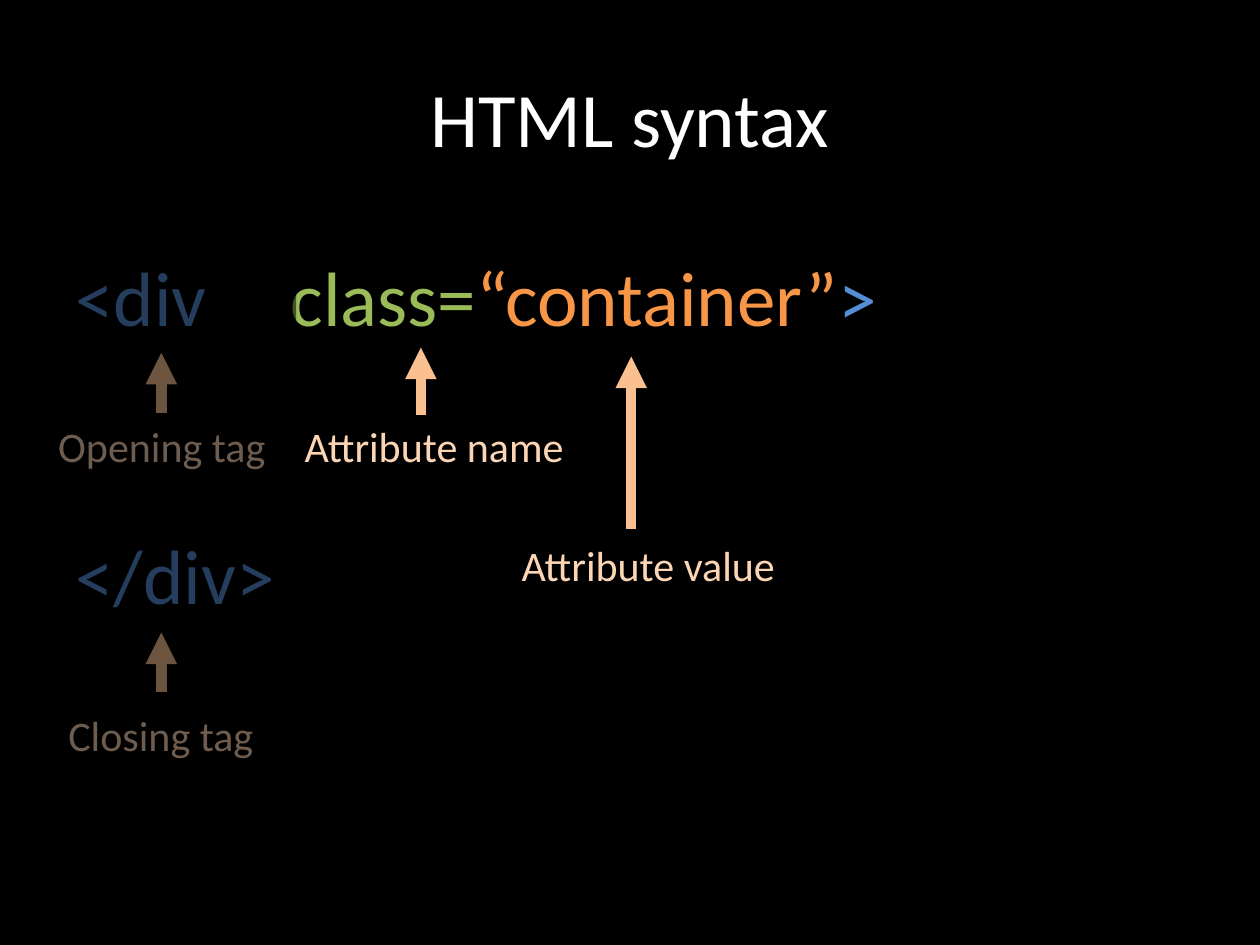
from pptx import Presentation
from pptx import util as u
from pptx.dml.color import RGBColor
from pptx.enum import shapes, text
from pptx.oxml import ns
from lxml import etree

Pt = u.Pt
BLACK, WHITE = "000000", "FFFFFF"
BLUE, GREEN, ORANGE = "558ED5", "9BBB59", "F79646"
LABEL, ARROW = "FCD5B5", "FAC090"


def rgb(color):
    return RGBColor.from_string(color)


def add_xml(parent, tag, **attrs):
    return etree.SubElement(parent, ns.qn(tag), attrs)


class SlideBuilder:
    font = "Calibri"
    code_size, label_size = 44, 24
    arrow_width = 6

    def __init__(self, slide):
        self.s = slide
        fill = slide.background.fill
        fill.solid()
        fill.fore_color.rgb = rgb(BLACK)

    def style(self, r, size, color):
        r.font.name, r.font.size = self.font, Pt(size)
        r.font.color.rgb = rgb(color)

    def title(self, words, left, top, width, height):
        sp = self.s.shapes.title
        sp.left, sp.top, sp.width, sp.height = map(Pt, (left, top, width, height))
        tf = sp.text_frame
        tf.text = words
        tf.vertical_anchor = text.MSO_ANCHOR.MIDDLE
        p = tf.paragraphs[0]
        p.alignment = text.PP_ALIGN.CENTER
        self.style(p.runs[0], self.code_size, WHITE)

    def box(self, left, top, width, height):
        tf = self.s.shapes.add_textbox(*map(Pt, (left, top, width, height))).text_frame
        tf.word_wrap = True
        tf.auto_size = text.MSO_AUTO_SIZE.SHAPE_TO_FIT_TEXT
        return tf

    def code(self, lines, left, top, width, height, tab, gap):
        tf = self.box(left, top, width, height)
        tf.text = "\n".join("" for _ in lines)
        for i, (p, parts) in enumerate(zip(tf.paragraphs, lines)):
            p.space_before = Pt(gap if i else 0)
            tabs = add_xml(p._p.get_or_add_pPr(), "a:tabLst")
            add_xml(tabs, "a:tab", pos=str(Pt(tab)), algn="l")
            for words, color in parts:
                r = p.add_run()
                r.text = words
                self.style(r, self.code_size, color)

    def label(self, words, left, top, width):
        tf = self.box(left, top, width, 36)
        tf.word_wrap = False
        tf.text = words
        p = tf.paragraphs[0]
        p.alignment = text.PP_ALIGN.CENTER
        self.style(p.runs[0], self.label_size, LABEL)

    def arrow_up(self, x, bottom, top):
        sp = self.s.shapes.add_connector(
            shapes.MSO_CONNECTOR.STRAIGHT, Pt(x), Pt(bottom), Pt(x), Pt(top))
        sp.line.color.rgb = rgb(ARROW)
        sp.line.width = Pt(self.arrow_width)
        add_xml(sp.line._get_or_add_ln(), "a:tailEnd", type="triangle")
        add_xml(sp._element.spPr, "a:effectLst")

    def veil(self, left, top, width, height, opacity):
        sp = self.s.shapes.add_shape(
            shapes.MSO_SHAPE.RECTANGLE, *map(Pt, (left, top, width, height)))
        sp.shadow.inherit = False
        sp.fill.solid()
        sp.fill.fore_color.rgb = rgb(BLACK)
        color = sp._element.spPr.find(".//" + ns.qn("a:srgbClr"))
        add_xml(color, "a:alpha", val=str(opacity * 1000))
        sp.line.fill.background()


def main():
    prs = Presentation()
    prs.slide_width, prs.slide_height = Pt(720), Pt(540)
    b = SlideBuilder(prs.slides.add_slide(prs.slide_layouts[5]))

    # Title and code sample
    b.title("HTML syntax", 36, 21.6, 648, 90)
    b.code([[("<div\t", BLUE), ("class=", GREEN), ("“container”", ORANGE), (">", BLUE)],
            [("</div>", BLUE)]],
           36, 139, 489, 220, tab=123, gap=106)

    # Tags, dimmed by a veil
    tag_x = 92.2
    b.arrow_up(tag_x, 236, 201.6)
    b.label("Opening tag", 25.2, 237, 134.6)
    b.label("Closing tag", 31, 401.8, 121.7)
    b.arrow_up(tag_x, 395.5, 361.5)
    b.veil(13.7, 82.8, 155.5, 359.3, opacity=56)

    # Attribute, left bright
    b.arrow_up(240.5, 237, 198.7)
    b.label("Attribute name", 165.6, 237, 164.9)
    b.arrow_up(360.7, 302.4, 203.8)
    b.label("Attribute value", 289.4, 304.6, 162)

    prs.save("out.pptx")


if __name__ == "__main__":
    main()
